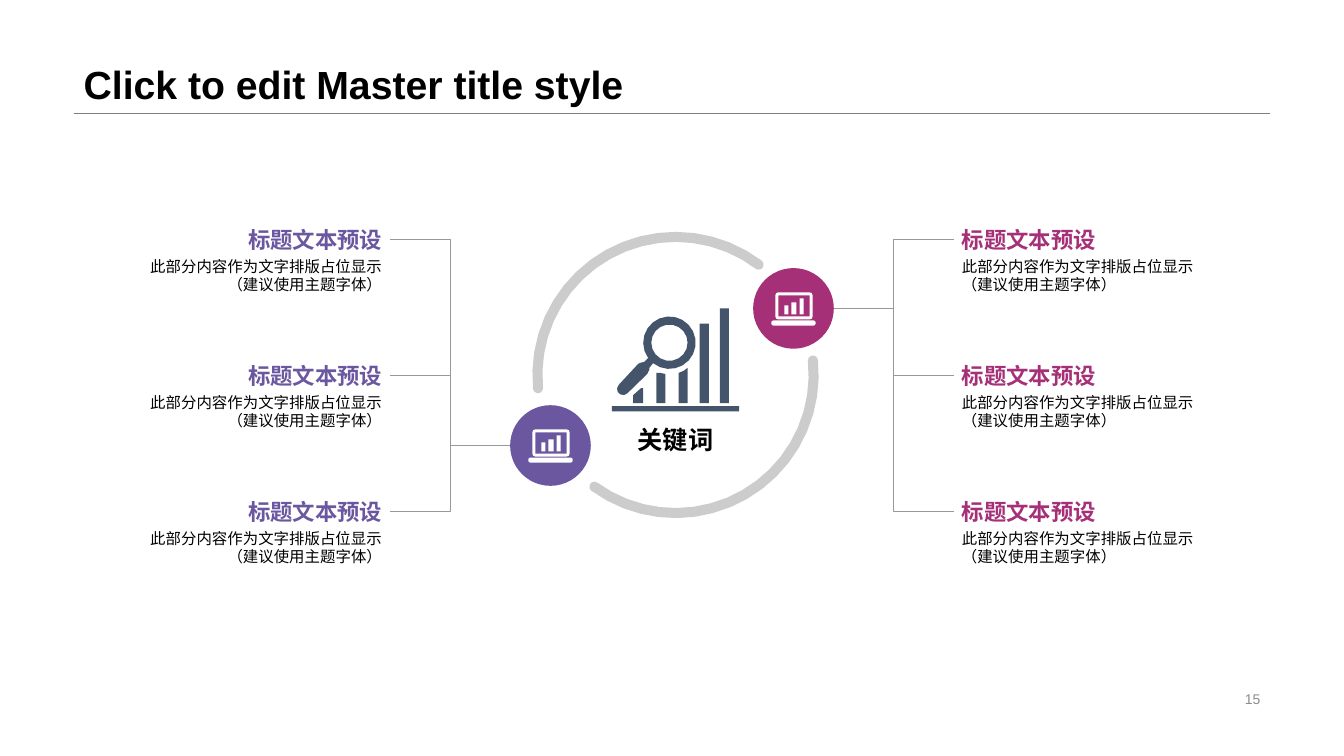
from dataclasses import dataclass
from math import acos, ceil, cos, degrees, radians, sin

from lxml.etree import SubElement
from pptx import Presentation
from pptx.dml.color import RGBColor
from pptx.enum.shapes import MSO_CONNECTOR as Link, MSO_SHAPE as Preset
from pptx.enum.text import MSO_ANCHOR as Anchor, MSO_AUTO_SIZE as AutoSize, PP_ALIGN as Align
from pptx.oxml.ns import qn
from pptx.shapes.autoshape import Shape
from pptx.slide import Slide
from pptx.util import Inches, Pt

Point = tuple[float, float]
Contour = list[Point]


@dataclass(frozen=True)
class Theme:
    font: str = "Arial"
    text: str = "000000"
    page_number: str = "8C8C8C"
    rule: str = "808080"
    link: str = "999999"
    ring: str = "CCCCCC"
    chart_icon: str = "44546A"
    laptop_icon: str = "FFFFFF"
    purple: str = "6B57A0"
    magenta: str = "A53078"
    title_size: int = 28
    keyword_size: int = 18
    heading_size: int = 16
    detail_size: int = 11
    page_size: int = 10


THEME = Theme()


@dataclass(frozen=True)
class Branch:
    color: str
    align: Align
    text_left: float
    link_start: float
    link_end: float
    hub: Point


HEADING = "标题文本预设"
DETAILS = ["此部分内容作为文字排版占位显示", "（建议使用主题字体）"]
ROW_TOP, ROW_GAP, ROW_COUNT = 2.24, 1.35, 3
TEXT_WIDTH, HEADING_HEIGHT, DETAIL_HEIGHT = 2.68, 0.27, 0.52
HUB_RADIUS = 0.4
BRANCHES = [
    Branch(THEME.purple, Align.RIGHT, 1.19, 3.87, 5.06, (5.46, 4.42)),
    Branch(THEME.magenta, Align.LEFT, 9.46, 9.46, 8.27, (7.87, 3.06)),
]


def write(box: Shape, lines: list[str], *, size: int, color: str = THEME.text,
          bold: bool = False, align: Align = Align.LEFT, anchor: Anchor = Anchor.TOP,
          first_spacing: float | None = None, inset: tuple[float, float] = (0.1, 0.05),
          wrap: bool = True, auto_size: AutoSize = AutoSize.NONE) -> None:
    frame = box.text_frame
    frame.word_wrap, frame.auto_size, frame.vertical_anchor = wrap, auto_size, anchor
    frame.margin_left = frame.margin_right = Inches(inset[0])
    frame.margin_top = frame.margin_bottom = Inches(inset[1])
    for index, line in enumerate(lines):
        paragraph = frame.add_paragraph() if index else frame.paragraphs[0]
        paragraph.alignment = align
        if index == 0 and first_spacing:
            paragraph.line_spacing = first_spacing
        run = paragraph.add_run()
        run.text = line
        run.font.name, run.font.size, run.font.bold = THEME.font, Pt(size), bold
        run.font.color.rgb = RGBColor.from_string(color)
        SubElement(run._r.get_or_add_rPr(), qn("a:ea"), typeface=THEME.font)


def add_text(slide: Slide, left: float, top: float, width: float, height: float,
             lines: list[str], **text_format) -> None:
    box = slide.shapes.add_textbox(Inches(left), Inches(top), Inches(width), Inches(height))
    write(box, lines, **text_format)


def add_link(slide: Slide, kind: Link, start: Point, end: Point, color: str, width: float) -> None:
    link = slide.shapes.add_connector(kind, *map(Inches, start + end))
    link.line.color.rgb = RGBColor.from_string(color)
    link.line.width = Pt(width)
    SubElement(link._element.spPr, qn("a:effectLst"))


def paint(shape: Shape, color: str) -> None:
    shape.shadow.inherit = False
    shape.fill.solid()
    shape.fill.fore_color.rgb = RGBColor.from_string(color)
    shape.line.fill.background()


def add_outline(slide: Slide, contours: list[Contour], color: str) -> None:
    """Fill closed contours as one shape; nested contours become holes."""
    scaled = [[(Inches(x), Inches(y)) for x, y in contour] for contour in contours]
    builder = slide.shapes.build_freeform(*scaled[0][0])
    for index, points in enumerate(scaled):
        if index:
            builder.move_to(*points[0])
        builder.add_line_segments(points[1:], close=True)
    paint(builder.convert_to_shape(), color)


def arc(center: Point, radius: float, start: float, end: float) -> Contour:
    """As few points as keep within 0.003 inches of an arc; degrees run clockwise from the right."""
    widest_step = 2 * degrees(acos(1 - 0.003 / radius))
    steps = ceil(abs(end - start) / widest_step)
    angles = [radians(start + (end - start) * i / steps) for i in range(steps + 1)]
    return [(center[0] + radius * cos(a), center[1] + radius * sin(a)) for a in angles]


def band(center: Point, radius: float, half: float, start: float, end: float) -> Contour:
    """An arc-shaped band with round ends."""
    first, last = (arc(center, radius, a, a + 1)[0] for a in (start, end))
    return (arc(center, radius + half, start, end) + arc(last, half, end, end + 180)
            + arc(center, radius - half, end, start)
            + arc(first, half, start + 180, start + 360))


def rounded(left: float, top: float, right: float, bottom: float, radius: float = 0) -> Contour:
    if not radius:
        return [(left, top), (right, top), (right, bottom), (left, bottom)]
    corners = [(right - radius, bottom - radius), (left + radius, bottom - radius),
               (left + radius, top + radius), (right - radius, top + radius)]
    return [point for i, corner in enumerate(corners)
            for point in arc(corner, radius, 90 * i, 90 * i + 90)]


def add_ring(slide: Slide) -> None:
    center = (6.7, 3.72)
    add_outline(slide, [band(center, 1.37, 0.05, start, end)
                        for start, end in [(174.5, 307), (-6, 126)]], THEME.ring)


def add_chart_icon(slide: Slide) -> None:
    lens = (6.64, 3.4)
    magnifier = (arc(lens, 0.26, 144.5, 488.5) + [(6.44, 3.65), (6.44, 3.67), (6.42, 3.71)]
                 + arc((6.18, 3.86), 0.06, 45, 225) + [(6.33, 3.61), (6.35, 3.6), (6.39, 3.59)])
    add_outline(slide, [
        rounded(6.07, 4.03, 7.33, 4.08),
        [(6.36, 3.85), (6.38, 3.85), (6.38, 4), (6.28, 4), (6.28, 3.92)],
        [(6.51, 3.7), (6.55, 3.7), (6.6, 3.71), (6.6, 4), (6.51, 4)],
        [(6.73, 3.7), (6.78, 3.68), (6.82, 3.65), (6.82, 4), (6.73, 4)],
        rounded(6.94, 3.21, 7.03, 4),
        rounded(7.14, 3.06, 7.23, 4),
        magnifier,
        arc(lens, 0.18, 0, 360),
    ], THEME.chart_icon)


def add_laptop_icon(slide: Slide, hub: Point) -> None:
    left, top = hub[0] - 0.22, hub[1] - 0.16
    parts = [(0, 0.28, 0.44, 0.33, 0.02), (0.04, 0, 0.41, 0.27, 0.03), (0.07, 0.03, 0.38, 0.24, 0),
             (0.13, 0.13, 0.17, 0.22, 0), (0.2, 0.1, 0.25, 0.22, 0), (0.28, 0.06, 0.32, 0.22, 0)]
    add_outline(slide, [rounded(left + x1, top + y1, left + x2, top + y2, radius)
                        for x1, y1, x2, y2, radius in parts], THEME.laptop_icon)


def add_branch(slide: Slide, branch: Branch) -> None:
    x, y = branch.hub
    hub = slide.shapes.add_shape(Preset.OVAL, Inches(x - HUB_RADIUS), Inches(y - HUB_RADIUS),
                                 Inches(2 * HUB_RADIUS), Inches(2 * HUB_RADIUS))
    paint(hub, branch.color)
    add_laptop_icon(slide, branch.hub)
    for row in range(ROW_COUNT):
        top = ROW_TOP + row * ROW_GAP
        add_text(slide, branch.text_left, top + HEADING_HEIGHT, TEXT_WIDTH, DETAIL_HEIGHT, DETAILS,
                 size=THEME.detail_size, align=branch.align, first_spacing=1.2, inset=(0.08, 0))
        add_text(slide, branch.text_left, top, TEXT_WIDTH, HEADING_HEIGHT, [HEADING],
                 size=THEME.heading_size, color=branch.color, bold=True, align=branch.align,
                 inset=(0.08, 0))
        add_link(slide, Link.ELBOW, (branch.link_start, top + HEADING_HEIGHT / 2),
                 (branch.link_end, y), THEME.link, 0.5)


def main() -> None:
    deck = Presentation()
    deck.slide_width, deck.slide_height = Inches(13.33), Inches(7.5)
    slide = deck.slides.add_slide(deck.slide_layouts.get_by_name("Title Only"))
    title = slide.shapes.title
    title.left, title.top, title.width, title.height = map(Inches, (0.73, 0, 11.87, 1.12))
    write(title, ["Click to edit Master title style"], size=THEME.title_size, bold=True,
          anchor=Anchor.BOTTOM, first_spacing=0.9)
    add_link(slide, Link.STRAIGHT, (0.73, 1.12), (12.6, 1.12), THEME.rule, 0.25)
    add_text(slide, 9.42, 6.82, 3.18, 0.23, ["15"], size=THEME.page_size,
             color=THEME.page_number, align=Align.RIGHT, anchor=Anchor.MIDDLE)
    add_ring(slide)
    add_chart_icon(slide)
    add_text(slide, 6.22, 4.16, 0.96, 0.4, ["关键词"], size=THEME.keyword_size, bold=True,
             align=Align.CENTER, wrap=False, auto_size=AutoSize.SHAPE_TO_FIT_TEXT)
    for branch in BRANCHES:
        add_branch(slide, branch)
    deck.save("out.pptx")


if __name__ == "__main__":
    main()
